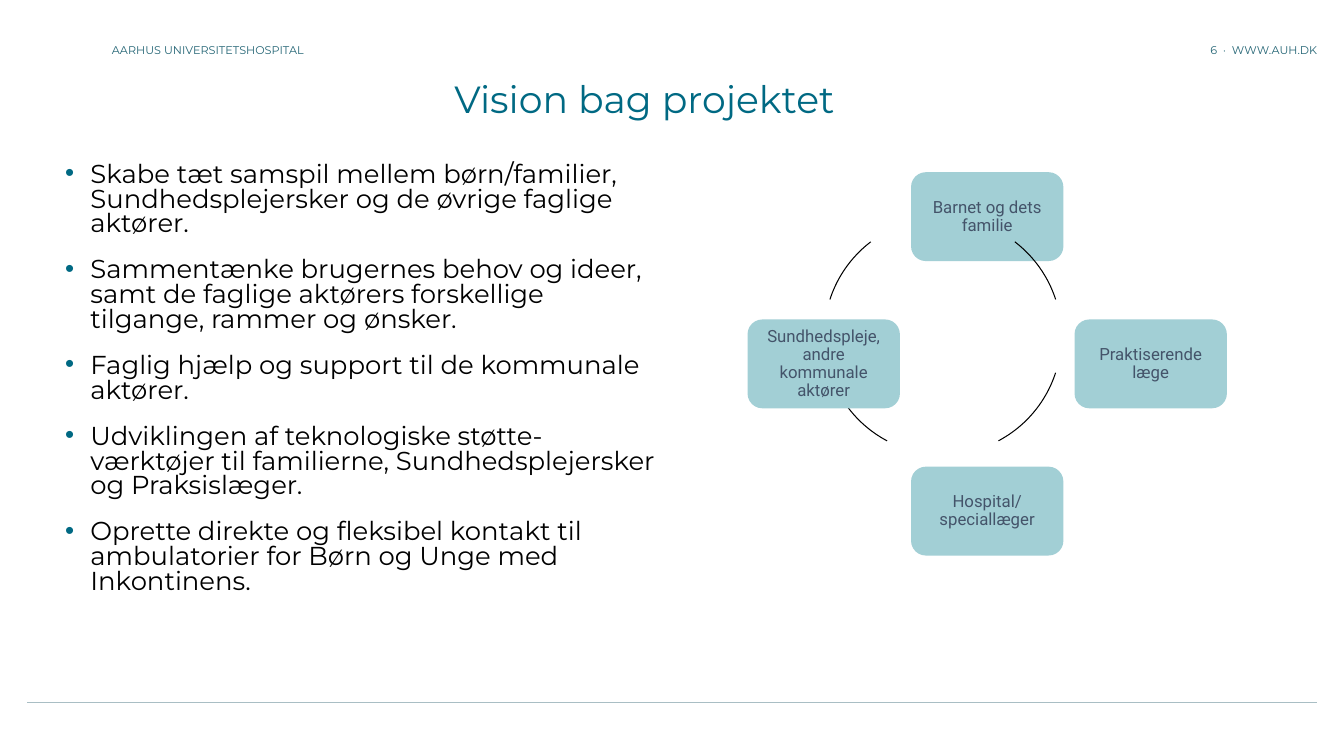
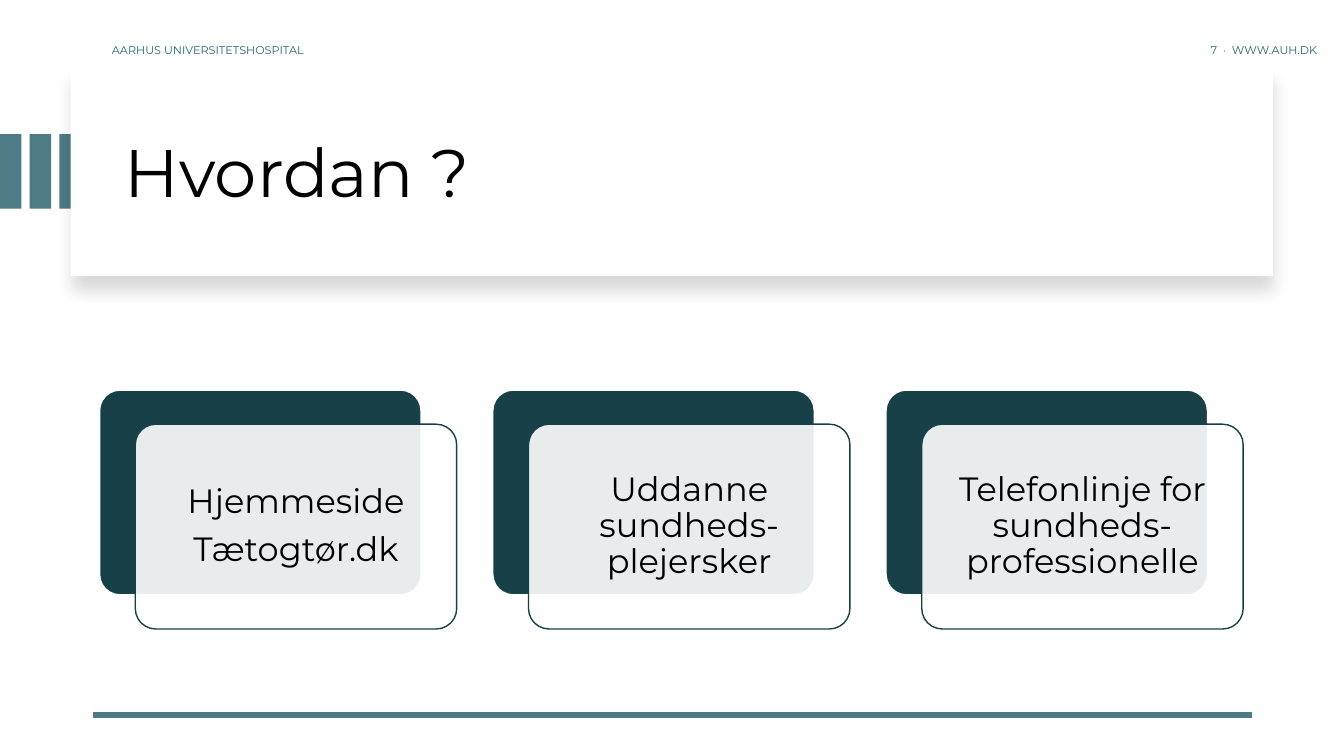
from pptx import Presentation, util as u
from pptx.dml.color import RGBColor
from pptx.enum import shapes, text
from pptx.oxml import parse_xml
from pptx.oxml.ns import nsdecls

INK = {
    "head": "246575", "rule": "A9BEC4", "title": "006983", "black": "000000",
    "node": "A2CFD5", "slate": "44546A", "bar": "4C7A85", "deep": "174049",
    "white": "FFFFFF",
}
FONT = "Montserrat"
OWNER, SITE = "AARHUS UNIVERSITETSHOSPITAL", "WWW.AUH.DK"

AIMS = [
    "Skabe tæt samspil mellem børn/familier, Sundhedsplejersker og de øvrige faglige aktører.",
    "Sammentænke brugernes behov og ideer, samt de faglige aktørers forskellige tilgange, rammer og ønsker.",
    "Faglig hjælp og support til de kommunale aktører.",
    "Udviklingen af teknologiske støtte-værktøjer til familierne, Sundhedsplejersker og Praksislæger.",
    "Oprette direkte og fleksibel kontakt til ambulatorier for Børn og Unge med Inkontinens.",
]
# Label, step from the ring's middle (x, y), arc after it (start, end in degrees)
RING = [
    ("Barnet og dets familie", (0, -1), (307.4, 342)),
    ("Praktiserende læge", (1, 0), (18, 62)),
    ("Hospital/ speciallæger", (0, 1), (118, 162)),
    ("Sundhedspleje, andre kommunale aktører", (-1, 0), (198, 232.6)),
]
CARDS = [
    ["Hjemmeside", "Tætogtør.dk"],
    ["Uddanne sundheds-plejersker"],
    ["Telefonlinje for sundheds-professionelle"],
]

KIND = shapes.MSO_SHAPE
MID, LOW = text.MSO_ANCHOR.MIDDLE, text.MSO_ANCHOR.BOTTOM
ALIGN = text.PP_ALIGN
CENTRED = {"alignment": ALIGN.CENTER, "line_spacing": 0.9}


def rgb(name):
    return RGBColor.from_string(INK[name])


def place(*cm):
    return [u.Cm(v) for v in cm]


def write(shape, lines, size, ink, font=FONT, anchor=None, inset=None,
          gap=0, bullet=None, **form):
    """Fill a shape with paragraphs; gap is the space before all but the first."""
    frame = shape.text_frame
    frame.word_wrap = True
    if anchor is not None:
        frame.vertical_anchor = anchor
    if inset is not None:
        for side in ("left", "top", "right", "bottom"):
            setattr(frame, "margin_" + side, u.Cm(inset))
    for i, line in enumerate(lines):
        para = frame.paragraphs[0] if i == 0 else frame.add_paragraph()
        if bullet:
            dot(para, bullet)
        if gap and i:
            para.space_before = u.Pt(gap)
        for key, val in form.items():
            setattr(para, key, val)
        run = para.add_run()
        run.text = line
        for key, val in {"name": font, "size": u.Pt(size)}.items():
            setattr(run.font, key, val)
        run.font.color.rgb = rgb(ink)


def dot(para, ink):
    """Give a paragraph a coloured round bullet and a hanging indent."""
    prop = para._p.get_or_add_pPr()
    prop.set("marL", str(u.Cm(1.27)))
    prop.set("indent", str(-u.Cm(0.64)))
    for tag in (f'<a:buClr {nsdecls("a")}><a:srgbClr val="{INK[ink]}"/></a:buClr>',
                f'<a:buFont {nsdecls("a")} typeface="Arial"/>',
                f'<a:buChar {nsdecls("a")} char="•"/>'):
        prop.append(parse_xml(tag))


def label(slide, box, lines, size, ink, **form):
    write(slide.shapes.add_textbox(*place(*box)), lines, size, ink, **form)


def draw(slide, kind, box, fill=None, line=None, width=1, round=None):
    shape = slide.shapes.add_shape(kind, *place(*box))
    shape.shadow.inherit = False
    if fill:
        shape.fill.solid()
        shape.fill.fore_color.rgb = rgb(fill)
    else:
        shape.fill.background()
    if line:
        shape.line.color.rgb = rgb(line)
        shape.line.width = u.Pt(width)
    else:
        shape.line.fill.background()
    if round:
        shape.adjustments[0] = round
    return shape


def rule(slide, ends, ink, width):
    line = slide.shapes.add_connector(shapes.MSO_CONNECTOR.STRAIGHT, *place(*ends))
    line.line.color.rgb = rgb(ink)
    line.line.width = u.Pt(width)
    line._element.spPr.append(parse_xml(f'<a:effectLst {nsdecls("a")}/>'))


def fade(shape, solid):
    """Make a solid fill show at the given percentage."""
    tint = shape._element.spPr.xpath("a:solidFill/a:srgbClr")[0]
    tint.append(parse_xml(f'<a:alpha {nsdecls("a")} val="{solid * 1000}"/>'))


def shade(shape, solid, blur, drop):
    """Cast a soft black shadow straight down."""
    shape._element.spPr.xpath("a:effectLst")[0].append(parse_xml(
        f'<a:outerShdw {nsdecls("a")} blurRad="{u.Pt(blur)}" dist="{u.Pt(drop)}" '
        f'dir="5400000" algn="t" rotWithShape="0"><a:srgbClr val="{INK["black"]}">'
        f'<a:alpha val="{solid * 1000}"/></a:srgbClr></a:outerShdw>'))


def start(deck, page):
    """Add a blank slide with the shared header."""
    slide = deck.slides.add_slide(deck.slide_layouts[6])
    form = {"anchor": LOW, "inset": 0}
    label(slide, (24.59, 0, 8.61, 1.42), [f"{page}  ·  {SITE}"], 8, "head",
          alignment=ALIGN.RIGHT, **form)
    label(slide, (2.82, 0, 11.3, 1.42), [OWNER], 8, "head", **form)
    return slide


def vision(deck):
    slide = start(deck, 6)
    rule(slide, (0.69, 17.7, 33.2, 17.7), "rule", 0.5)
    label(slide, (7.82, 2.06, 16.84, 1.09), ["Vision bag projektet"], 27, "title",
          anchor=LOW, alignment=ALIGN.CENTER, line_spacing=0.7)
    label(slide, (0.76, 3.99, 16.18, 11.91), AIMS, 18.5, "black",
          gap=15, bullet="title", line_spacing=0.8)

    wide, high = 3.84, 2.24
    midx, midy, stepx, stepy = 24.88, 9.17, 4.12, 3.71
    arcx, arcy, rad = 23.76, 8.47, 2.99
    for name, (dx, dy), turn in RING:
        box = (midx + dx * stepx - wide / 2, midy + dy * stepy - high / 2, wide, high)
        node = draw(slide, KIND.ROUNDED_RECTANGLE, box, "node")
        write(node, [name], 12, "slate", font="Roboto", anchor=MID, inset=0.14,
              space_after=u.Pt(4.2), **CENTRED)
        arc = draw(slide, KIND.ARC, (arcx - rad, arcy - rad, 2 * rad, 2 * rad),
                   line="black", width=0.75)
        for i, deg in enumerate(turn):
            arc.adjustments[i] = deg * 0.6  # 60000 units a degree, scaled by 100000


def how(deck):
    slide = start(deck, 7)
    for i in range(3):
        draw(slide, KIND.RECTANGLE, (i * 0.75, 3.38, 0.54, 1.88), "bar")
    panel = draw(slide, KIND.RECTANGLE, (1.78, 1.7, 30.3, 5.26), "white")
    shade(panel, 15, 11, 10)
    label(slide, (2.9, 2.26, 28.27, 4.32), ["Hvordan ?"], 48, "black",
          anchor=MID, line_spacing=0.9)
    rule(slide, (31.55, 18.01, 2.34, 18.01), "bar", 4.5)

    left, top, pitch, wide, high = 2.51, 9.83, 9.91, 8.1, 5.16
    for i, lines in enumerate(CARDS):
        x = left + i * pitch
        draw(slide, KIND.ROUNDED_RECTANGLE, (x, top, wide, high), "deep", "white", round=0.1)
        front = draw(slide, KIND.ROUNDED_RECTANGLE, (x + 0.9, top + 0.86, wide, high),
                     "white", "deep", round=0.1)
        fade(front, 90)
        write(front, lines, 24, "black", anchor=MID, inset=0.25,
              space_after=u.Pt(8.4), **CENTRED)


def main():
    deck = Presentation()
    deck.slide_width, deck.slide_height = place(33.87, 19.05)
    vision(deck)
    how(deck)
    deck.save("out.pptx")


if __name__ == "__main__":
    main()
